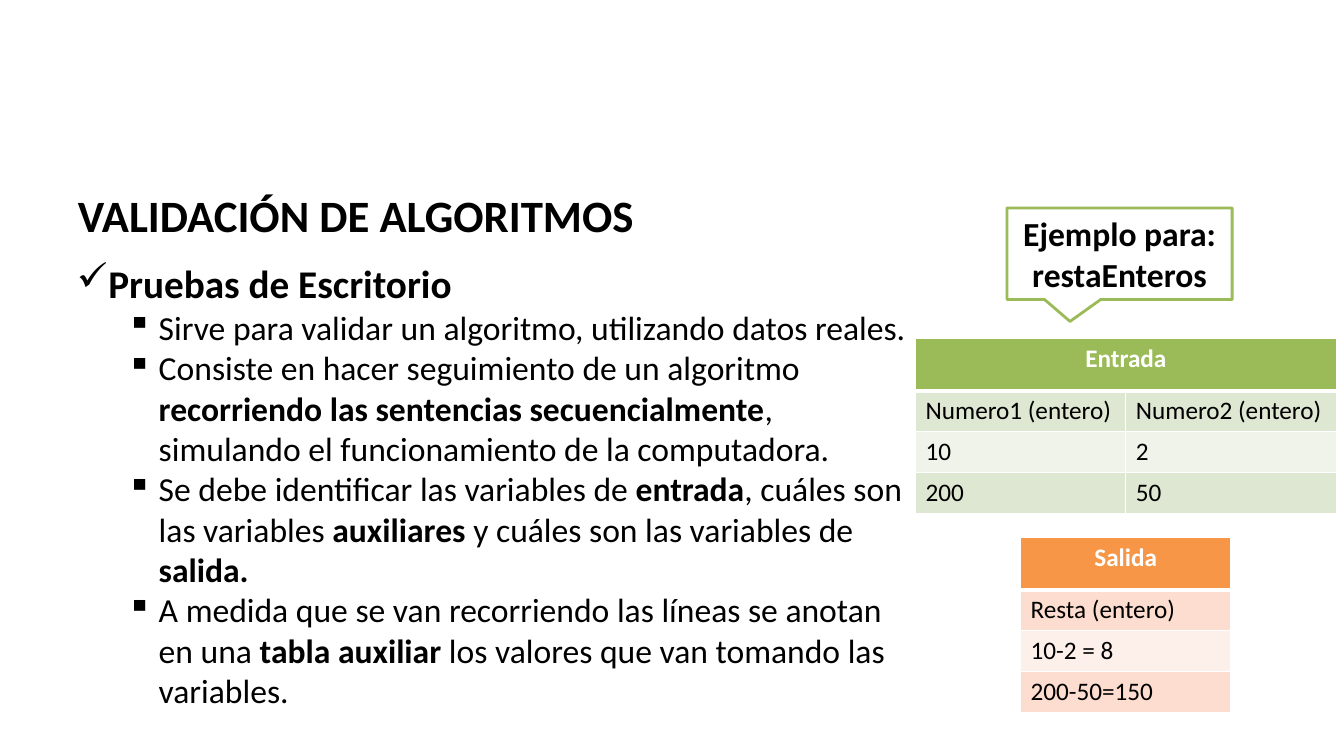
import pptx
import pptx.dml.color
import pptx.enum.shapes
import pptx.enum.text
import pptx.oxml
import pptx.oxml.ns
import pptx.util
from lxml import etree

Pt = pptx.util.Pt
RGBColor = pptx.dml.color.RGBColor
CENTER = pptx.enum.text.PP_ALIGN.CENTER
LEFT = pptx.enum.text.PP_ALIGN.LEFT
MIDDLE = pptx.enum.text.MSO_ANCHOR.MIDDLE
qn = pptx.oxml.ns.qn

BLACK = RGBColor(0, 0, 0)
WHITE = RGBColor(255, 255, 255)
GREEN = RGBColor(0x9B, 0xBB, 0x59)
GREEN_DARK_BAND = RGBColor(0xDE, 0xE7, 0xD1)
GREEN_LIGHT_BAND = RGBColor(0xEF, 0xF3, 0xEA)
ORANGE = RGBColor(0xF7, 0x96, 0x46)
ORANGE_DARK_BAND = RGBColor(0xFC, 0xDD, 0xCF)
ORANGE_LIGHT_BAND = RGBColor(0xFD, 0xEF, 0xE9)

HEADING = "VALIDACIÓN DE ALGORITMOS"
TOPIC = "Pruebas de Escritorio"
EXAMPLE = "Ejemplo para: restaEnteros"
POINTS = [
    [("Sirve para validar un algoritmo, utilizando datos reales.", False)],
    [("Consiste en hacer seguimiento de un algoritmo ", False),
     ("recorriendo las sentencias secuencialmente", True),
     (", simulando el funcionamiento de la computadora.", False)],
    [("Se debe identificar las variables de ", False),
     ("entrada", True),
     (", cuáles son las variables ", False),
     ("auxiliares ", True),
     ("y cuáles son las variables de", False),
     (" salida.", True)],
    [("A medida que se van recorriendo las líneas se anotan en una ", False),
     ("tabla auxiliar ", True),
     ("los valores que van tomando las variables.", False)],
]
TABLES = [
    {"title": "Entrada", "left": 654, "top": 242, "head": GREEN,
     "bands": (GREEN_DARK_BAND, GREEN_LIGHT_BAND),
     "rows": [("Numero1 (entero)", "Numero2 (entero)"), ("10", "2"), ("200", "50")]},
    {"title": "Salida", "left": 729, "top": 384, "head": ORANGE,
     "bands": (ORANGE_DARK_BAND, ORANGE_LIGHT_BAND),
     "rows": [("Resta (entero)",), ("10-2 = 8",), ("200-50=150",)]},
]
COLUMN_WIDTH = 150.2
HEAD_HEIGHT = 37.2
ROW_HEIGHT = 29.2
BULLET_HANG = 22.5


def write_runs(paragraph, runs, size, color=BLACK):
    for words, bold in runs:
        run = paragraph.add_run()
        run.text = words
        run.font.color.rgb = color
        look = {"name": "Calibri", "size": Pt(size), "bold": bold}
        for key, value in look.items():
            setattr(run.font, key, value)


def set_bullet(paragraph, symbol, indent):
    properties = paragraph._p.get_or_add_pPr()
    properties.set("marL", str(Pt(indent)))
    properties.set("indent", str(-Pt(BULLET_HANG)))
    etree.SubElement(properties, qn("a:buChar")).set("char", symbol)


def set_borders(cell, bottom):
    properties = cell._tc.get_or_add_tcPr()
    widths = {"a:lnL": 1, "a:lnR": 1, "a:lnT": 1, "a:lnB": bottom}
    for position, (side, width) in enumerate(widths.items()):
        line = pptx.oxml.parse_xml(
            f'<{side} {pptx.oxml.ns.nsdecls("a")} w="{Pt(width)}"><a:solidFill>'
            f'<a:srgbClr val="{WHITE}"/></a:solidFill></{side}>')
        properties.insert(position, line)


def add_text_frame(slide, left, top, width, height):
    frame = slide.shapes.add_textbox(Pt(left), Pt(top), Pt(width), Pt(height)).text_frame
    frame.word_wrap = True
    return frame


def add_values_table(slide, title, left, top, head, bands, rows):
    columns = len(rows[0])
    height = HEAD_HEIGHT + ROW_HEIGHT * len(rows)
    table = slide.shapes.add_table(
        len(rows) + 1, columns, Pt(left), Pt(top),
        Pt(COLUMN_WIDTH * columns), Pt(height)).table
    table.first_row = table.horz_banding = False
    for column in table.columns:
        column.width = Pt(COLUMN_WIDTH)
    title_row = (title,) + ("",) * (columns - 1)
    for r, values in enumerate([title_row] + rows):
        is_head = r == 0
        table.rows[r].height = Pt(HEAD_HEIGHT if is_head else ROW_HEIGHT)
        for c, value in enumerate(values):
            cell = table.cell(r, c)
            cell.fill.solid()
            cell.fill.fore_color.rgb = head if is_head else bands[(r - 1) % 2]
            set_borders(cell, 3 if is_head else 1)
            paragraph = cell.text_frame.paragraphs[0]
            paragraph.alignment = CENTER if is_head else LEFT
            if value:
                write_runs(paragraph, [(value, is_head)], 18, WHITE if is_head else BLACK)
    if columns > 1:
        table.cell(0, 0).merge(table.cell(0, columns - 1))


def main():
    deck = pptx.Presentation()
    deck.slide_width, deck.slide_height = Pt(960), Pt(540)
    slide = deck.slides.add_slide(deck.slide_layouts[6])

    heading = add_text_frame(slide, 48.5, 130.5, 420.5, 46)
    write_runs(heading.paragraphs[0], [(HEADING, True)], 32)

    body = add_text_frame(slide, 47.8, 182, 608.4, 399.6)
    write_runs(body.paragraphs[0], [(TOPIC, True)], 28)
    set_bullet(body.paragraphs[0], "✓", BULLET_HANG)
    for point in POINTS:
        paragraph = body.add_paragraph()
        paragraph.level = 1
        write_runs(paragraph, point, 24)
        set_bullet(paragraph, "▪", 58.5)

    for values_table in TABLES:
        add_values_table(slide, **values_table)

    example = slide.shapes.add_shape(
        pptx.enum.shapes.MSO_SHAPE.RECTANGULAR_CALLOUT,
        Pt(719.3), Pt(148.5), Pt(160.8), Pt(65.4))
    example.adjustments[0], example.adjustments[1] = -0.22, 0.74
    example.shadow.inherit = False
    example.fill.solid()
    example.fill.fore_color.rgb = WHITE
    example.line.color.rgb = GREEN
    example.line.width = Pt(2)
    example.text_frame.word_wrap = True
    example.text_frame.vertical_anchor = MIDDLE
    example.text_frame.paragraphs[0].alignment = CENTER
    write_runs(example.text_frame.paragraphs[0], [(EXAMPLE, True)], 24)

    deck.save("out.pptx")


if __name__ == "__main__":
    main()
